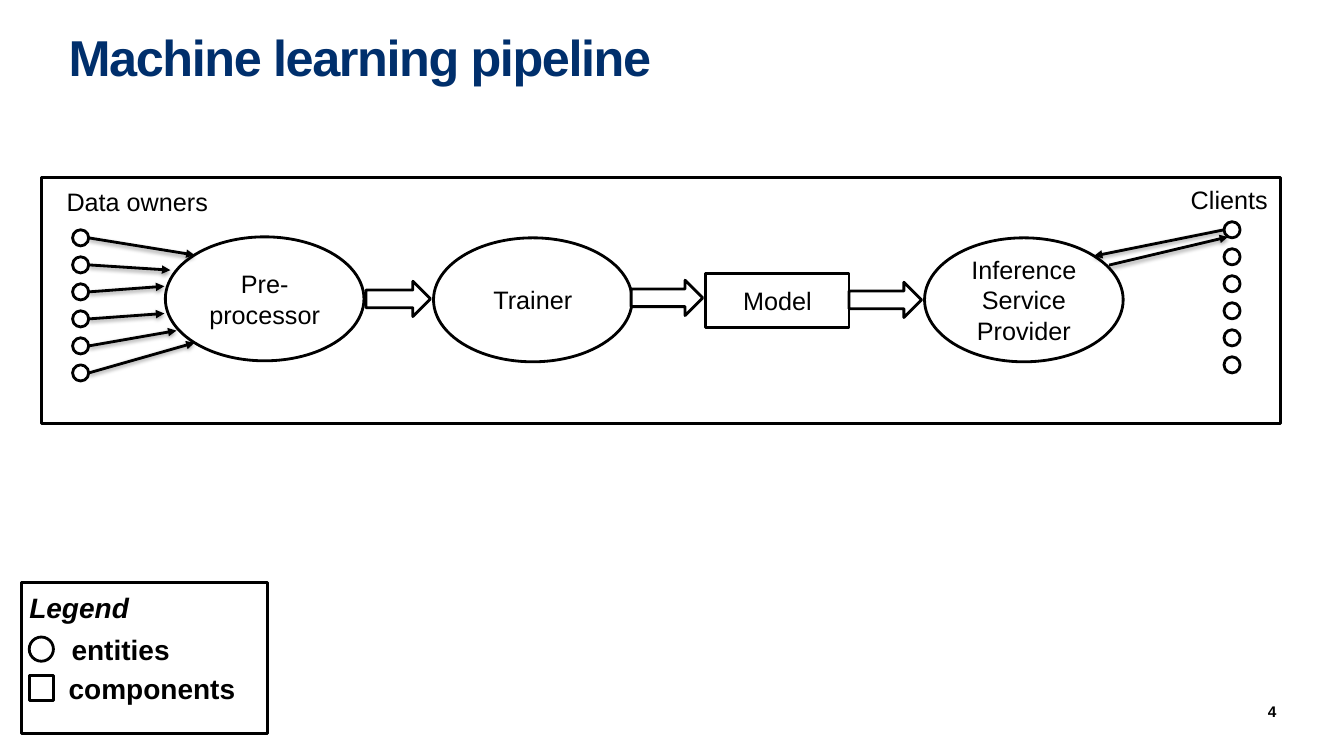
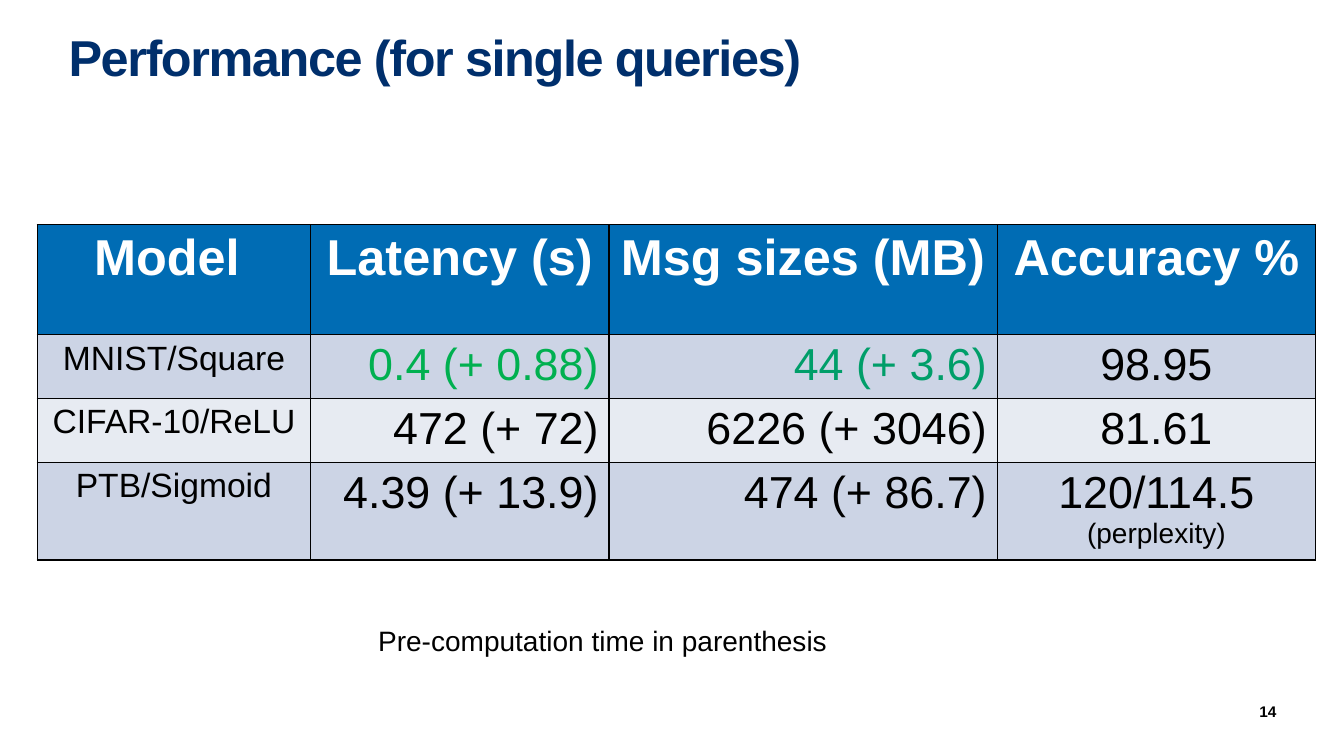
from lxml import etree
from pptx import Presentation
from pptx.dml.color import RGBColor
from pptx.enum.shapes import MSO_CONNECTOR, MSO_SHAPE
from pptx.enum.text import MSO_ANCHOR, PP_ALIGN
from pptx.oxml.ns import qn
from pptx.util import Inches, Pt

OVAL, RECT, ARROW = MSO_SHAPE.OVAL, MSO_SHAPE.RECTANGLE, MSO_SHAPE.RIGHT_ARROW
LEFT, CENTER, RIGHT = PP_ALIGN.LEFT, PP_ALIGN.CENTER, PP_ALIGN.RIGHT
TOP, MIDDLE = MSO_ANCHOR.TOP, MSO_ANCHOR.MIDDLE
FONT = "Arial"
COLORS = {
    "ink": "000000", "white": "FFFFFF", "title": "002F6C", "header": "006CB4",
    "band_dark": "CCD4E5", "band_light": "E7EBF2",
    "green": "00B050", "teal": "009E69",
}

# Content: pipeline
PIPELINE_TITLE, PIPELINE_PAGE = "Machine learning pipeline", "4"
FRAME = (0.41, 1.76, 12.29, 2.44)
STAGES = [  # shape, position and size, label
    (OVAL, (1.64, 2.35, 1.97, 1.23), "Pre-processor"),
    (OVAL, (4.3, 2.36, 1.97, 1.23), "Trainer"),
    (RECT, (7, 2.71, 1.42, 0.54), "Model"),
    (OVAL, (9.17, 2.36, 1.97, 1.23), "Inference Service Provider"),
]
BLOCK_ARROWS = [(3.63, 2.79, 0.64, 0.35), (6.26, 2.78, 0.71, 0.35),
                (8.42, 2.8, 0.72, 0.35)]
GROUP_LABELS = [("Data owners", (0.66, 1.85, 2.28, 0.3)),
                ("Clients", (11.81, 1.83, 0.98, 0.3))]
DOT, DOT_STEP, DOT_COUNT = 0.16, 0.268, 6
OWNERS_AT, CLIENTS_AT = (0.72, 2.28), (12.14, 2.2)
OWNER_TARGETS = [(1.93, 2.53), (1.69, 2.68), (1.63, 2.84),
                 (1.63, 3.11), (1.75, 3.28), (1.93, 3.4)]
CLIENT_LINKS = [((12.14, 2.28), (10.85, 2.54)), ((11, 2.63), (12.18, 2.35))]

# Content: legend
LEGEND_FRAME = (0.21, 5.78, 2.44, 1.5)
LEGEND_TITLE = ("Legend", (0.29, 5.86, 2.05, 0.34))
LEGEND_ITEMS = [
    (OVAL, (0.29, 6.32, 0.24, 0.24), "entities", (0.71, 6.27, 1.54, 0.34)),
    (RECT, (0.29, 6.7, 0.24, 0.25), "components", (0.68, 6.66, 1.81, 0.34)),
]

# Content: performance
RESULTS_TITLE, RESULTS_PAGE = "Performance (for single queries)", "14"
TABLE_AT = (0.37, 2.23, 12.68, 2.99)
COLUMN_WIDTHS = [2.71, 2.96, 3.85, 3.16]
ROW_HEIGHTS = [1.09, 0.58, 0.57, 0.75]
RESULTS = [  # a cell holds one line of text per paragraph
    ["Model ", "Latency (s)", "Msg sizes (MB)", "Accuracy %"],
    ["MNIST/Square", "0.4 (+ 0.88)", "44 (+ 3.6)", "98.95"],
    ["CIFAR-10/ReLU", "472 (+ 72)", "6226 (+ 3046)", "81.61"],
    ["PTB/Sigmoid", "4.39 (+ 13.9)", "474 (+ 86.7)", "120/114.5\n(perplexity)"],
]
COLUMN_SIZES = [24, 32, 32, 32]
COLUMN_ALIGNS = [CENTER, RIGHT, RIGHT, CENTER]
HIGHLIGHTS = {(1, 1): "green", (1, 2): "teal"}
TABLE_NOTE = ("Pre-computation time in parenthesis", (3.75, 6.19, 4.49, 0.34))


def inches(values):
    return [Inches(value) for value in values]


def color(name):
    return RGBColor.from_string(COLORS[name])


def write(para, text, size, ink="ink", bold=False, italic=False, align=LEFT):
    para.alignment = align
    span = para.add_run()
    span.text = text
    font = span.font
    font.name, font.size, font.bold, font.italic = FONT, Pt(size), bold, italic
    font.color.rgb = color(ink)
    return span


def add_text(page, place, text, size, anchor=TOP, wrap=True, **style):
    frame = page.shapes.add_textbox(*inches(place)).text_frame
    frame.word_wrap = wrap
    frame.vertical_anchor = anchor
    frame.margin_left = frame.margin_right = 0
    frame.margin_top = frame.margin_bottom = 0
    para = frame.paragraphs[0]
    return para, write(para, text, size, **style)


def add_outline(page, kind, place, label=None):
    shape = page.shapes.add_shape(kind, *inches(place))
    shape.shadow.inherit = False
    shape.fill.solid()
    shape.fill.fore_color.rgb = color("white")
    shape.line.color.rgb = color("ink")
    shape.line.width = Pt(2)
    if label:
        shape.text_frame.word_wrap = True
        shape.text_frame.vertical_anchor = MIDDLE
        write(shape.text_frame.paragraphs[0], label, 18, align=CENTER)


def add_arrow(page, start, end):
    line = page.shapes.add_connector(MSO_CONNECTOR.STRAIGHT, *inches(start + end))
    line.line.color.rgb = color("ink")
    line.line.width = Pt(2)
    etree.SubElement(line.line._get_or_add_ln(), qn("a:tailEnd"), type="triangle")
    # Soft shadow straight below the line
    effects = etree.SubElement(line._element.spPr, qn("a:effectLst"))
    shadow = etree.SubElement(effects, qn("a:outerShdw"), blurRad=str(Pt(3.1)),
                              dist=str(Pt(1.6)), dir="5400000", rotWithShape="0")
    tint = etree.SubElement(shadow, qn("a:srgbClr"), val=COLORS["ink"])
    etree.SubElement(tint, qn("a:alpha"), val="38000")


def add_page(deck, title, number):
    page = deck.slides.add_slide(deck.slide_layouts[6])
    para, span = add_text(page, (0.68, 0.35, 11.97, 0.91), title, 36,
                          ink="title", bold=True)
    para.line_spacing = 0.85
    span._r.get_or_add_rPr().set("spc", "-100")
    add_text(page, (11.79, 6.97, 0.87, 0.17), number, 11, anchor=MIDDLE,
             bold=True, align=RIGHT)
    return page


def add_dots(page, origin):
    left, top = origin
    for index in range(DOT_COUNT):
        add_outline(page, OVAL, (left, top + index * DOT_STEP, DOT, DOT))


def build_pipeline(deck):
    page = add_page(deck, PIPELINE_TITLE, PIPELINE_PAGE)
    # Legend
    add_outline(page, RECT, LEGEND_FRAME)
    text, place = LEGEND_TITLE
    add_text(page, place, text, 20, bold=True, italic=True)
    for kind, key_place, text, text_place in LEGEND_ITEMS:
        add_outline(page, kind, key_place)
        add_text(page, text_place, text, 20, bold=True)
    # Stages between data owners and clients
    add_outline(page, RECT, FRAME)
    add_dots(page, OWNERS_AT)
    for kind, place, label in STAGES:
        add_outline(page, kind, place, label)
    add_dots(page, CLIENTS_AT)
    for text, place in GROUP_LABELS:
        add_text(page, place, text, 18)
    for place in BLOCK_ARROWS:
        add_outline(page, ARROW, place)
    # Data flow
    left, top = OWNERS_AT
    for index, target in enumerate(OWNER_TARGETS):
        add_arrow(page, (left + DOT, top + DOT / 2 + index * DOT_STEP), target)
    for start, end in CLIENT_LINKS:
        add_arrow(page, start, end)


def add_borders(cell):
    properties = cell._tc.get_or_add_tcPr()
    for side in ("lnL", "lnR", "lnT", "lnB"):
        edge = etree.SubElement(properties, qn("a:" + side), w=str(Pt(1)))
        fill = etree.SubElement(edge, qn("a:solidFill"))
        etree.SubElement(fill, qn("a:srgbClr"), val=COLORS["ink"])


def fill_cell(cell, row, column):
    header = row == 0
    add_borders(cell)
    cell.fill.solid()
    band = "header" if header else "band_dark" if row % 2 else "band_light"
    cell.fill.fore_color.rgb = color(band)
    ink = "white" if header else HIGHLIGHTS.get((row, column), "ink")
    size = 36 if header else COLUMN_SIZES[column]
    align = CENTER if header else COLUMN_ALIGNS[column]
    frame = cell.text_frame
    for index, text in enumerate(RESULTS[row][column].split("\n")):
        para = frame.add_paragraph() if index else frame.paragraphs[0]
        write(para, text, 20 if index else size, ink, bold=header, align=align)


def build_results(deck):
    page = add_page(deck, RESULTS_TITLE, RESULTS_PAGE)
    table = page.shapes.add_table(len(ROW_HEIGHTS), len(COLUMN_WIDTHS),
                                  *inches(TABLE_AT)).table
    for column, width in zip(table.columns, COLUMN_WIDTHS):
        column.width = Inches(width)
    for row, height in enumerate(ROW_HEIGHTS):
        table.rows[row].height = Inches(height)
        for column in range(len(COLUMN_WIDTHS)):
            fill_cell(table.cell(row, column), row, column)
    text, place = TABLE_NOTE
    add_text(page, place, text, 20, wrap=False)


def main():
    deck = Presentation()
    deck.slide_width, deck.slide_height = Inches(13.33), Inches(7.5)
    build_pipeline(deck)
    build_results(deck)
    deck.save("out.pptx")


if __name__ == "__main__":
    main()
